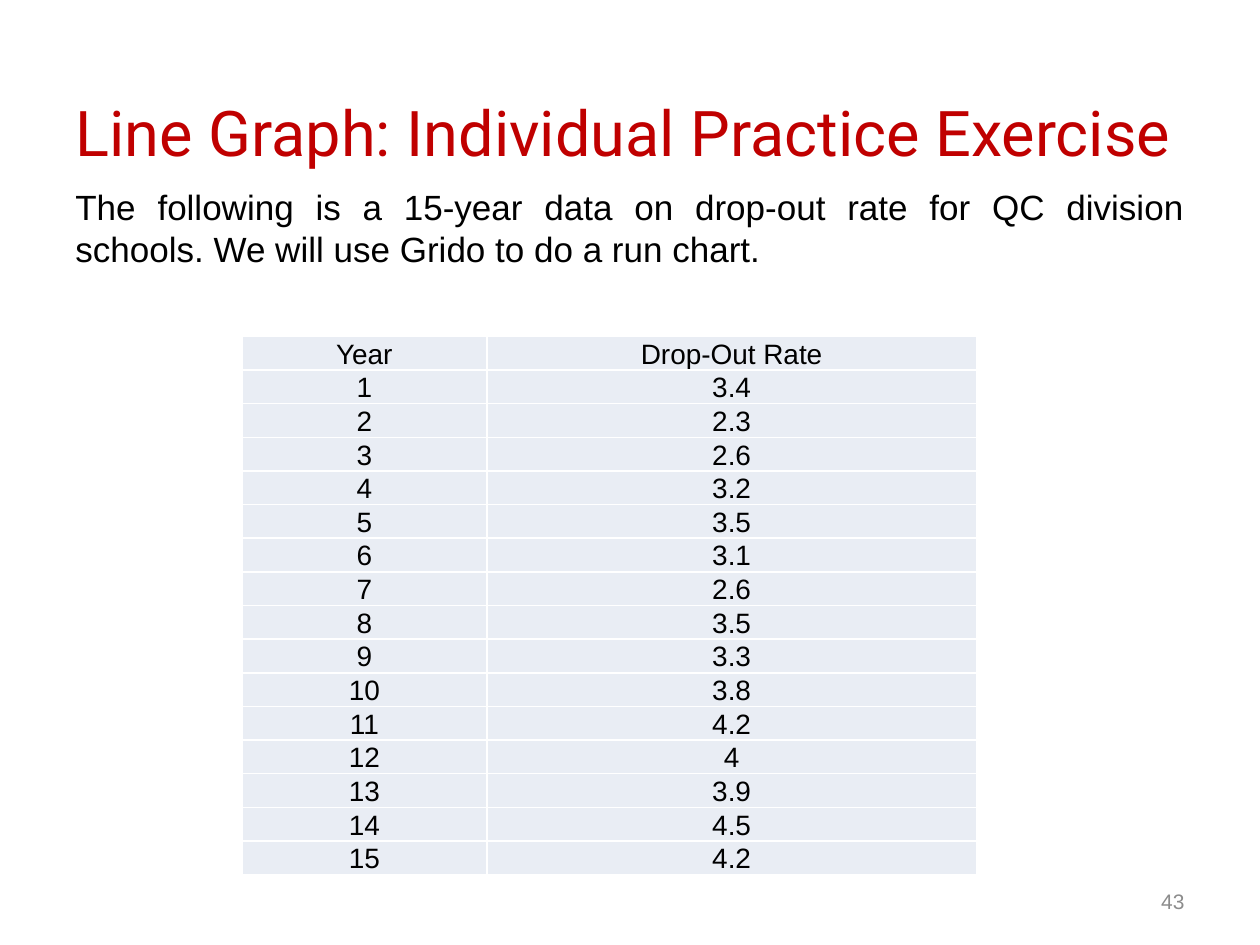
from dataclasses import dataclass

from lxml import etree
from pptx import Presentation
from pptx import util as u
from pptx.dml.color import RGBColor
from pptx.enum import text
from pptx.oxml import ns


@dataclass(frozen=True)
class Theme:
    """Colours, fonts and type sizes of the slide."""
    title_font: str = "Roboto"
    body_font: str = "Arial"
    title_size: int = 36
    body_size: int = 20
    table_size: int = 16
    number_size: int = 12
    red: str = "C00000"
    black: str = "000000"
    grey: str = "8C8C8C"
    cell: str = "E9EDF4"
    border: str = "FFFFFF"


THEME = Theme()
WIDTH, HEIGHT = u.Inches(10), u.Inches(7.5)
MARGIN = 0.05
RATES = ["3.4", "2.3", "2.6", "3.2", "3.5", "3.1", "2.6", "3.5",
         "3.3", "3.8", "4.2", "4", "3.9", "4.5", "4.2"]


def area(left, top, width, height):
    """Turn shares of the slide into a box in slide units."""
    return (round(WIDTH * left), round(HEIGHT * top),
            round(WIDTH * width), round(HEIGHT * height))


def write(text_frame, words, size, color, align, font=THEME.body_font):
    """Set the words of a text frame and format them."""
    text_frame.text = words
    paragraph = text_frame.paragraphs[0]
    paragraph.alignment = align
    for run in paragraph.runs:
        run.font.name = font
        run.font.size = u.Pt(size)
        run.font.color.rgb = RGBColor.from_string(color)


def add_title(slide, words, box):
    """Move and format the title placeholder."""
    title = slide.shapes.title
    title.left, title.top, title.width, title.height = box
    write(title.text_frame, words, THEME.title_size, THEME.red,
          text.PP_ALIGN.LEFT, THEME.title_font)
    title.text_frame.vertical_anchor = text.MSO_ANCHOR.MIDDLE


def add_text(slide, words, box, size, color, align, anchor):
    """Add a wrapping text box."""
    text_frame = slide.shapes.add_textbox(*box).text_frame
    text_frame.word_wrap = True
    text_frame.vertical_anchor = anchor
    write(text_frame, words, size, color, align)


def set_borders(cell, color, width):
    """Draw a solid line on each side of a table cell."""
    properties = cell._tc.get_or_add_tcPr()
    for index, side in enumerate(("lnL", "lnR", "lnT", "lnB")):
        line = etree.Element(ns.qn(f"a:{side}"), w=str(u.Pt(width)))
        fill = etree.SubElement(line, ns.qn("a:solidFill"))
        etree.SubElement(fill, ns.qn("a:srgbClr"), val=color)
        properties.insert(index, line)


def format_cell(cell, words):
    """Fill one table cell and set its text."""
    cell.margin_left = cell.margin_right = u.Inches(0.01)
    cell.margin_top = cell.margin_bottom = 0
    cell.vertical_anchor = text.MSO_ANCHOR.BOTTOM
    cell.fill.solid()
    cell.fill.fore_color.rgb = RGBColor.from_string(THEME.cell)
    set_borders(cell, THEME.border, 1)
    write(cell.text_frame, words, THEME.table_size, THEME.black,
          text.PP_ALIGN.CENTER)


def add_data_table(slide, rows, box, column_shares):
    """Add a table with equal rows and columns split by shares."""
    table = slide.shapes.add_table(len(rows), len(column_shares), *box).table
    for column, share in zip(table.columns, column_shares):
        column.width = round(box[2] * share / sum(column_shares))
    for row, values in zip(table.rows, rows):
        row.height = box[3] // len(rows)
        for cell, words in zip(row.cells, values):
            format_cell(cell, words)


def main():
    """Build and save the slide."""
    presentation = Presentation()
    presentation.slide_width, presentation.slide_height = WIDTH, HEIGHT
    slide = presentation.slides.add_slide(presentation.slide_layouts[5])
    add_title(slide, "Line Graph: Individual Practice Exercise",
              area(MARGIN, 0.056, 0.925, 1 / 6))
    add_text(slide, "The following is a 15-year data on drop-out rate for QC "
             "division schools. We will use Grido to do a run chart.",
             area(MARGIN, 0.19, 1 - 2 * MARGIN, 0.66), THEME.body_size,
             THEME.black, text.PP_ALIGN.JUSTIFY, text.MSO_ANCHOR.TOP)
    rows = [("Year", "Drop-Out Rate")]
    rows += [(str(year), rate) for year, rate in enumerate(RATES, 1)]
    add_data_table(slide, rows, area(0.192, 0.356, 0.583, 0.548), (1, 2))
    add_text(slide, "43", area(0.717, 0.927, 0.233, 0.053), THEME.number_size,
             THEME.grey, text.PP_ALIGN.RIGHT, text.MSO_ANCHOR.MIDDLE)
    presentation.save("out.pptx")


if __name__ == "__main__":
    main()
